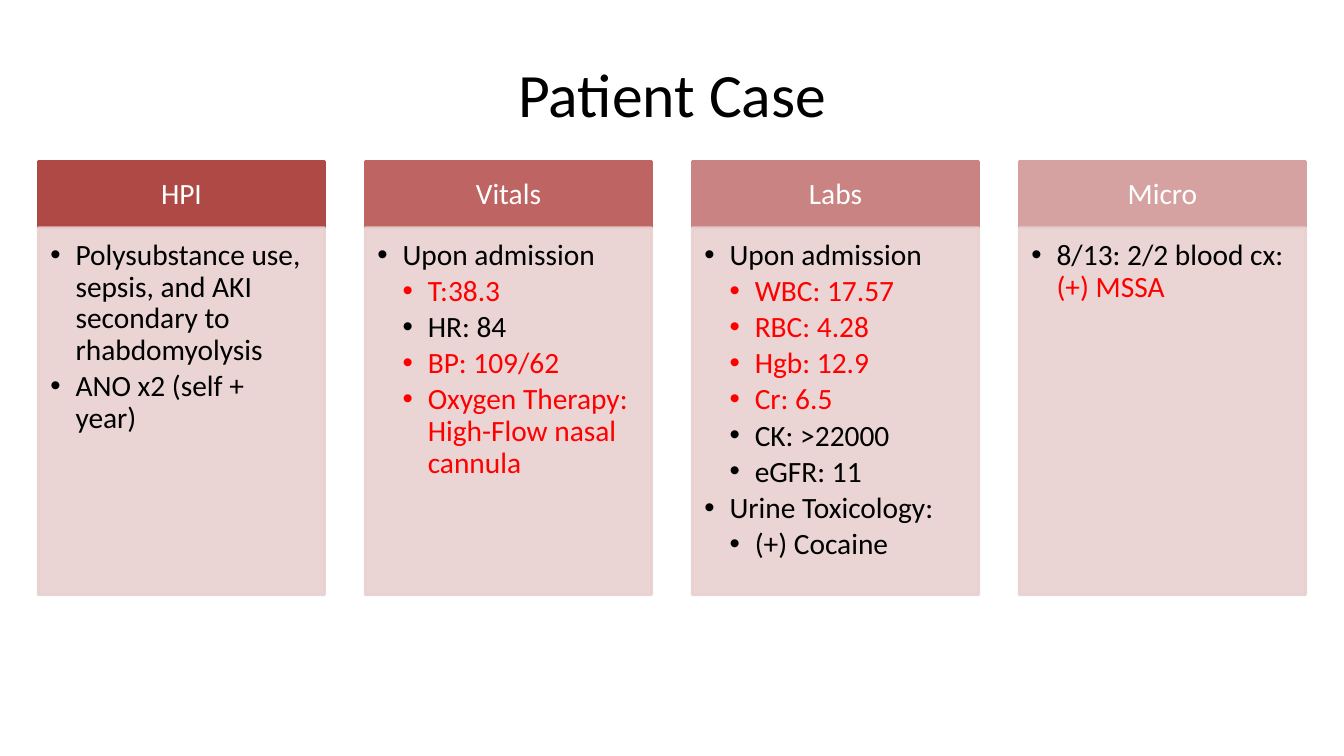
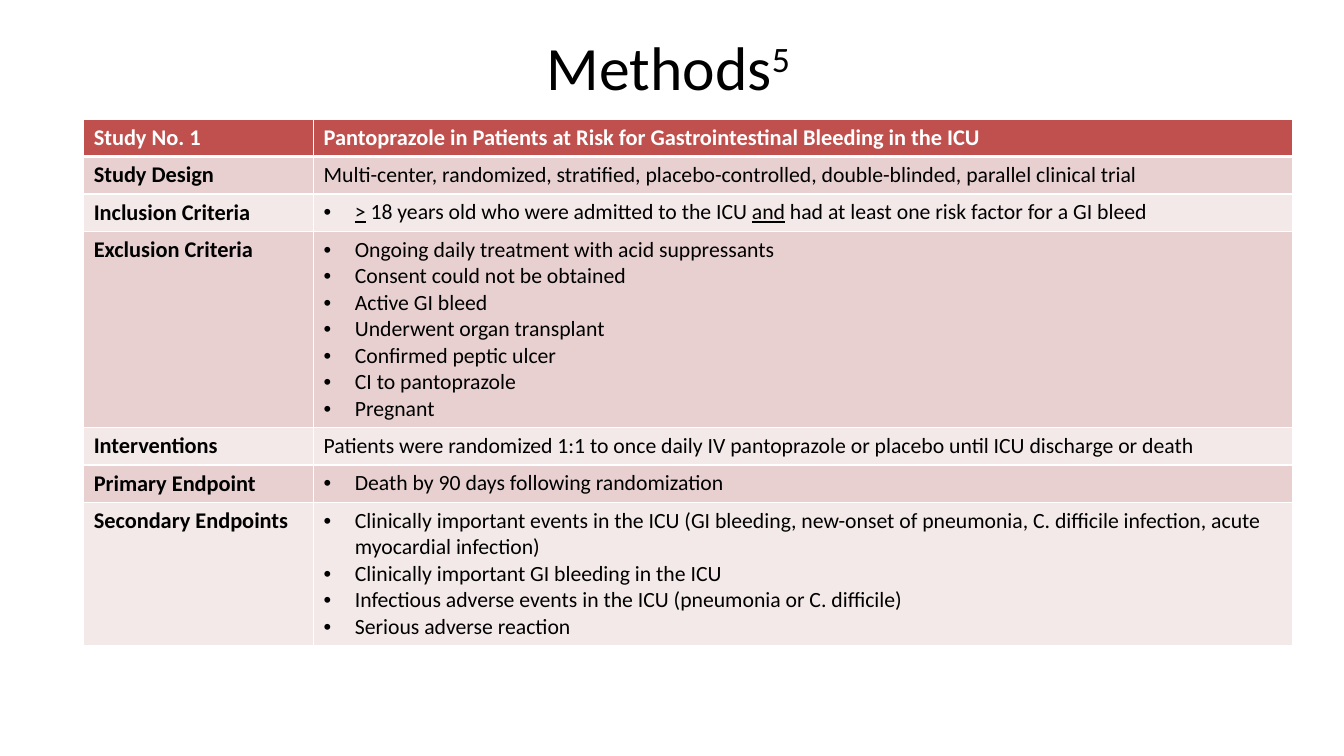
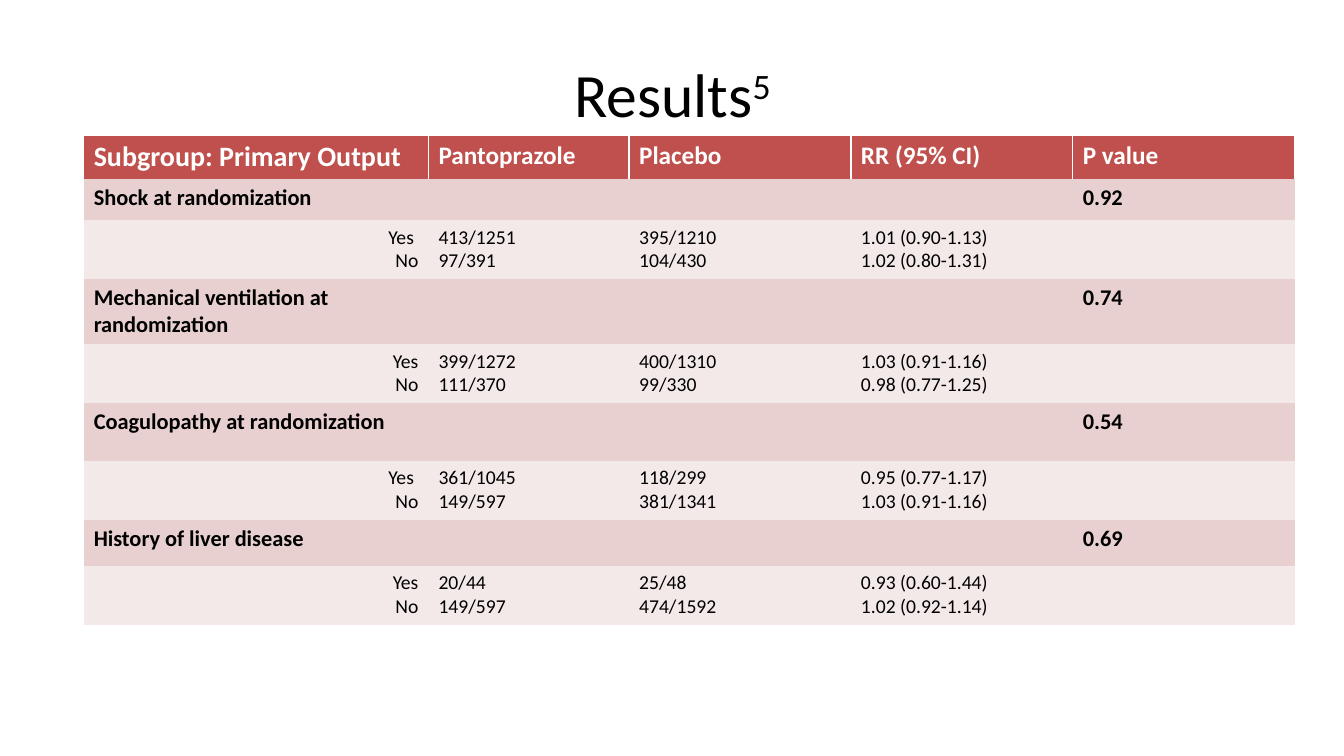
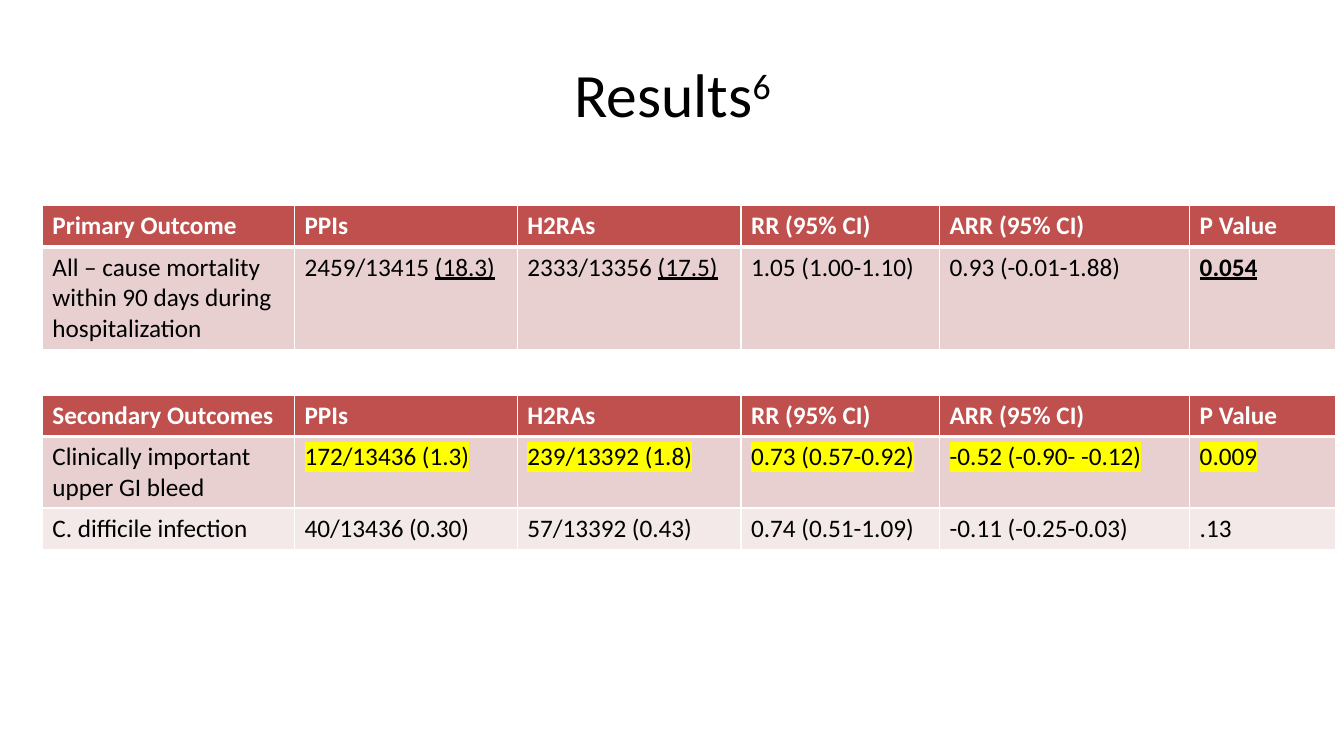
"""Build four slides on a patient case and stress ulcer trials."""
import pptx
import pptx.util
import pptx.dml.color
import pptx.enum.shapes
import pptx.enum.text
import pptx.oxml.ns
from lxml import etree

PX = 9144
FONT = "Calibri"
BLACK, WHITE, RED, YELLOW = "000000", "FFFFFF", "FF0000", "FFFF00"
HEAD, DARK, PALE = "C0504D", "E8D0D0", "F4E9E9"
PLAIN = "{2D5ABB26-0587-4C30-8999-92F81FD0307C}"
ALIGN = pptx.enum.text.PP_ALIGN
ANCHOR = pptx.enum.text.MSO_ANCHOR
RECT = pptx.enum.shapes.MSO_SHAPE.RECTANGLE

CARDS = [
    ("HPI", "AE4946", [
        (1, "Polysubstance use, sepsis, and AKI secondary to rhabdomyolysis"),
        (1, "ANO x2 (self + year)")]),
    ("Vitals", "BE6462", [
        (1, "Upon admission"),
        (2, (("T:38.3", "r"),)),
        (2, "HR: 84"),
        (2, (("BP: 109/62", "r"),)),
        (2, (("Oxygen Therapy: High-Flow nasal cannula", "r"),))]),
    ("Labs", "C98382", [
        (1, "Upon admission"),
        (2, (("WBC: 17.57", "r"),)),
        (2, (("RBC: 4.28", "r"),)),
        (2, (("Hgb: 12.9", "r"),)),
        (2, (("Cr: 6.5", "r"),)),
        (2, "CK: >22000"),
        (2, "eGFR: 11"),
        (1, "Urine Toxicology:"),
        (2, "(+) Cocaine")]),
    ("Micro", "D6A2A1", [
        (1, ("8/13: 2/2 blood cx: ", ("(+) MSSA", "r")))]),
]

METHODS = [
    ["Study No. 1",
     "Pantoprazole in Patients at Risk for Gastrointestinal Bleeding in the ICU"],
    ["Study Design",
     "Multi-center, randomized, stratified, placebo-controlled, double-blinded, "
     "parallel clinical trial"],
    ["Inclusion Criteria", [
        ((">", "u"), " 18 years old who were admitted to the ICU ", ("and", "u"),
         " had at least one risk factor for a GI bleed")]],
    ["Exclusion Criteria", [
        "Ongoing daily treatment with acid suppressants",
        "Consent could not be obtained",
        "Active GI bleed",
        "Underwent organ transplant",
        "Confirmed peptic ulcer",
        "CI to pantoprazole",
        "Pregnant"]],
    ["Interventions",
     "Patients were randomized 1:1 to once daily IV pantoprazole or placebo "
     "until ICU discharge or death"],
    ["Primary Endpoint", ["Death by 90 days following randomization"]],
    ["Secondary Endpoints", [
        "Clinically important events in the ICU (GI bleeding, new-onset of pneumonia, "
        "C. difficile infection, acute myocardial infection)",
        "Clinically important GI bleeding in the ICU",
        "Infectious adverse events in the ICU (pneumonia or C. difficile)",
        "Serious adverse reaction"]],
]

SUBHEAD = ["Subgroup: Primary Output", "Pantoprazole", "Placebo", "RR (95% CI)", "P value"]
GROUPS = [
    ("Shock at randomization", "0.92", "Yes ",
     ["413/1251", "97/391"], ["395/1210", "104/430"],
     ["1.01 (0.90-1.13)", "1.02 (0.80-1.31)"]),
    ("Mechanical ventilation at randomization", "0.74", "Yes",
     ["399/1272", "111/370"], ["400/1310", "99/330"],
     ["1.03 (0.91-1.16)", "0.98 (0.77-1.25)"]),
    ("Coagulopathy at randomization", "0.54", "Yes ",
     ["361/1045", "149/597"], ["118/299", "381/1341"],
     ["0.95 (0.77-1.17)", "1.03 (0.91-1.16)"]),
    ("History of liver disease", "0.69", "Yes",
     ["20/44", "149/597"], ["25/48", "474/1592"],
     ["0.93 (0.60-1.44)", "1.02 (0.92-1.14)"]),
]

ARMS = ["PPIs", "H2RAs", "RR (95% CI)", "ARR (95% CI)", "P Value"]
PRIMARY = [
    ["Primary Outcome", *ARMS],
    ["All – cause mortality within 90 days during hospitalization",
     ("2459/13415 ", ("(18.3)", "u")), ("2333/13356 ", ("(17.5)", "u")),
     "1.05 (1.00-1.10)", "0.93 (-0.01-1.88)", (("0.054", "bu"),)],
]
BLEED = ["172/13436 (1.3)", "239/13392 (1.8)", "0.73 (0.57-0.92)",
         "-0.52 (-0.90- -0.12)", "0.009"]
SECOND = [
    ["Secondary Outcomes", *ARMS],
    ["Clinically important upper GI bleed", *[((text, "h"),) for text in BLEED]],
    ["C. difficile infection", "40/13436 (0.30)", "57/13392 (0.43)",
     "0.74 (0.51-1.09)", "-0.11 (-0.25-0.03)", ".13"],
]
WIDTHS = [250, 221, 222, 197, 248, 145]


def px(*nums):
    return [pptx.util.Emu(round(n * PX)) for n in nums]


def rgb(color):
    return pptx.dml.color.RGBColor.from_string(color)


def sub(node, tag, **attrs):
    return etree.SubElement(node, pptx.oxml.ns.qn("a:" + tag), **attrs)


def paint(fill, color):
    fill.solid()
    fill.fore_color.rgb = rgb(color)


def add_runs(para, runs, size, color=BLACK, bold=False):
    for run in [runs] if isinstance(runs, str) else runs:
        text, flags = (run, "") if isinstance(run, str) else run
        if not text:
            continue
        piece = para.add_run()
        piece.text = text
        font = piece.font
        font.size = pptx.util.Pt(size)
        font.bold = bold or "b" in flags
        font.color.rgb = rgb(RED if "r" in flags else color)
        if "u" in flags:
            font.underline = True
        if "s" in flags:
            piece._r.get_or_add_rPr().set("baseline", "30000")
        if "h" in flags:
            mark = sub(piece._r.get_or_add_rPr(), "highlight")
            sub(mark, "srgbClr", val=YELLOW)
        font.name = FONT


def add_paras(frame, paras):
    for i, runs in enumerate(paras):
        para = frame.paragraphs[0] if i == 0 else frame.add_paragraph()
        yield para, runs


def bullet(para, left, hang):
    props = para._p.get_or_add_pPr()
    props.set("marL", str(left * PX))
    props.set("indent", str(-hang * PX))
    sub(props, "buFont", typeface="Arial")
    sub(props, "buChar", char="•")


def new_slide(deck, runs, top=30):
    slide = deck.slides.add_slide(deck.slide_layouts[5])
    title = slide.shapes.title
    title.left, title.top, title.width, title.height = px(67, top, 1200, 125)
    frame = title.text_frame
    frame.vertical_anchor = ANCHOR.MIDDLE
    frame.paragraphs[0].alignment = ALIGN.CENTER
    add_runs(frame.paragraphs[0], runs, 44)
    return slide


def add_box(slide, place, color, insets, alpha=None):
    box = slide.shapes.add_shape(RECT, *px(*place))
    box.shadow.inherit = False
    paint(box.fill, color)
    paint(box.line.fill, color)
    box.line.width = pptx.util.Pt(2)
    if alpha:
        for tone in box._element.spPr.iter(pptx.oxml.ns.qn("a:srgbClr")):
            sub(tone, "alpha", val=str(alpha * 1000))
    frame = box.text_frame
    frame.word_wrap = True
    (frame.margin_left, frame.margin_top,
     frame.margin_right, frame.margin_bottom) = px(*insets)
    return frame


def add_card(slide, left, name, color, items):
    head = add_box(slide, (left, 160, 284, 66), color, (16, 9, 16, 9))
    head.vertical_anchor = ANCHOR.MIDDLE
    para = head.paragraphs[0]
    para.alignment = ALIGN.CENTER
    para.line_spacing = 0.9
    add_runs(para, name, 21, WHITE)
    body = add_box(slide, (left, 226, 284, 364), DARK, (12, 12, 16, 18), 90)
    body.vertical_anchor = ANCHOR.TOP
    for para, (level, runs) in add_paras(body, items):
        para.alignment = ALIGN.LEFT
        para.level = level
        bullet(para, 25 * level, 25)
        para.line_spacing = 0.9
        para.space_after = pptx.util.Pt(3.15)
        add_runs(para, runs, 21)


def add_edges(cell, edges):
    props = cell._tc.get_or_add_tcPr()
    for side in "LRTB":
        if side in edges:
            line = sub(props, "ln" + side, w=str(edges[side] * 12700))
            sub(sub(line, "solidFill"), "srgbClr", val=WHITE)


def add_grid(slide, left, top, cols, rows, data, look, lined=True):
    place = px(left, top, sum(cols), sum(rows))
    grid = slide.shapes.add_table(len(rows), len(cols), *place).table
    grid._tbl.tblPr.find(pptx.oxml.ns.qn("a:tableStyleId")).text = PLAIN
    for col, width in zip(grid.columns, px(*cols)):
        col.width = width
    for row, height in zip(grid.rows, px(*rows)):
        row.height = height
    for r, line in enumerate(data):
        for c, value in enumerate(line):
            cell = grid.cell(r, c)
            if lined:
                add_edges(cell, {"L": 1, "R": 1, "T": 3 if r == 1 else 1,
                                 "B": 3 if r == 0 else 1})
            elif r == 0:
                add_edges(cell, {"L": 1, "R": 1, "T": 1})
            paint(cell.fill, HEAD if r == 0 else DARK if r % 2 else PALE)
            size, bold, dots, align = look(r, c)
            many = isinstance(value, list)
            for para, runs in add_paras(cell.text_frame, value if many else [value]):
                para.alignment = align
                if many and dots:
                    bullet(para, 31, 31)
                add_runs(para, runs, size, BLACK if r else WHITE, bold)


def method_look(r, c):
    strong = r == 0 or c == 0
    return 16 if strong else 15.5, strong, True, ALIGN.LEFT


def group_look(r, c):
    if r == 0:
        return 18 if c else 20, True, False, ALIGN.LEFT
    if r % 2:
        return 16, True, False, ALIGN.LEFT
    return 14, False, False, ALIGN.LEFT if c else ALIGN.RIGHT


def result_look(r, c):
    return 18, r == 0, False, ALIGN.LEFT


def main():
    deck = pptx.Presentation()
    deck.slide_width, deck.slide_height = px(1333, 750)

    slide = new_slide(deck, "Patient Case")
    for i, card in enumerate(CARDS):
        add_card(slide, 38 + i * 973 / 3, *card)

    slide = new_slide(deck, ("Methods", ("5 ", "s")), 3)
    add_grid(slide, 83, 118, [228, 971], [37, 37, 37, 194, 37, 37, 142],
             METHODS, method_look)

    slide = new_slide(deck, ("Results", ("5", "s")))
    rows = [SUBHEAD]
    for name, chance, yes, drug, sham, ratio in GROUPS:
        rows.append([name, "", "", "", chance])
        rows.append([[yes, "No"], drug, sham, ratio, ""])
    add_grid(slide, 83, 134, [342, 199, 220, 220, 220],
             [44, 40, 58, 65, 58, 58, 58, 46, 58], rows, group_look, False)

    slide = new_slide(deck, ("Results", ("6", "s")))
    add_grid(slide, 42, 204, WIDTHS, [41, 101], PRIMARY, result_look)
    add_grid(slide, 42, 392, WIDTHS, [41, 71, 41], SECOND, result_look)

    deck.save("out.pptx")


if __name__ == "__main__":
    main()
